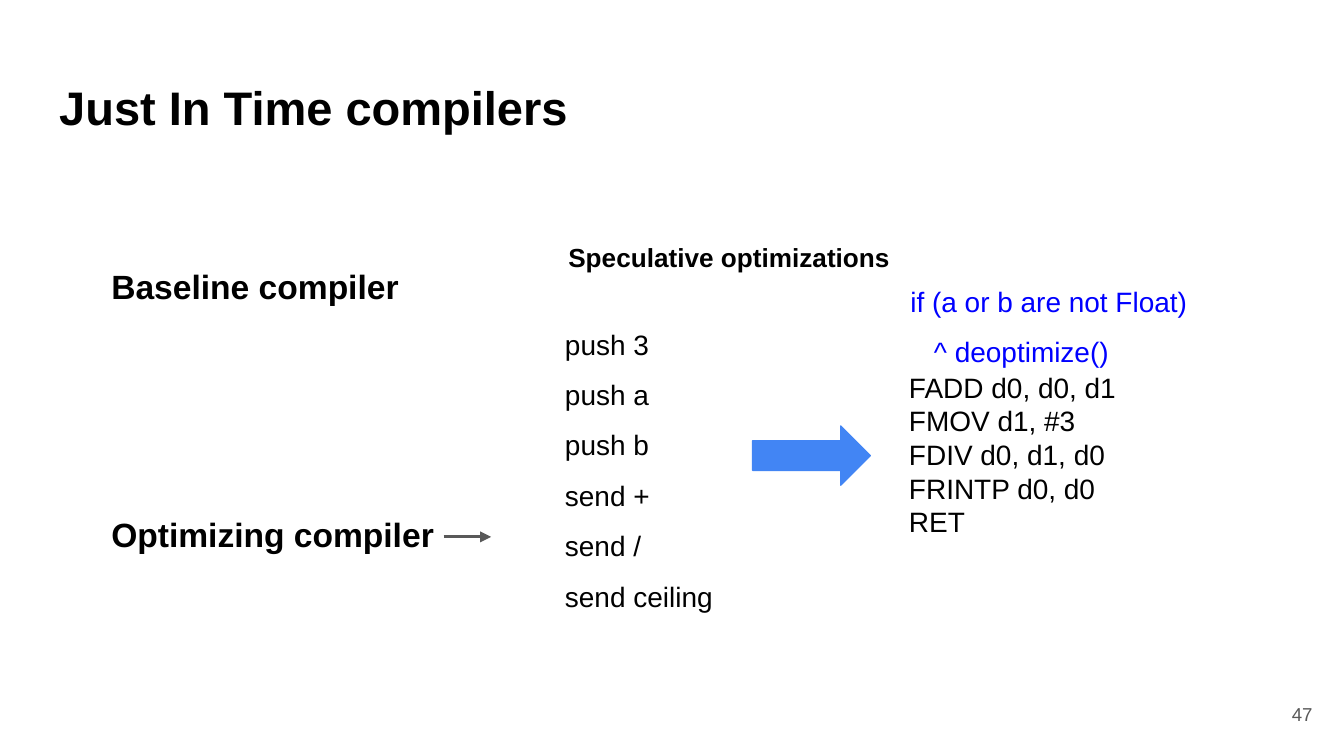
import pptx
import pptx.util
import pptx.dml.color
import pptx.enum.shapes
import pptx.enum.text
import pptx.oxml
import pptx.oxml.ns

PX = 4572  # EMU per px, 200 px to the inch
BLACK = pptx.dml.color.RGBColor(0x00, 0x00, 0x00)
GRAY = pptx.dml.color.RGBColor(0x59, 0x59, 0x59)
CODE_BLUE = pptx.dml.color.RGBColor(0x00, 0x00, 0xFF)
ARROW_BLUE = pptx.dml.color.RGBColor(0x42, 0x85, 0xF4)

ALIGN = pptx.enum.text.PP_ALIGN
ANCHOR = pptx.enum.text.MSO_ANCHOR

BYTECODES = ["push 3", "push a", "push b", "send +", "send /", "send ceiling"]
INSTRUCTIONS = ["FADD d0, d0, d1", "FMOV d1, #3", "FDIV d0, d1, d0",
                "FRINTP d0, d0", "RET"]
GUARD = ["if (a or b are not Float)", "^ deoptimize()"]


def px(*lengths):
    return [pptx.util.Emu(length * PX) for length in lengths]


def apply(target, values):
    for name, value in values.items():
        setattr(target, name, value)


def write(box, lines, size, color=BLACK, bold=False, spacing=1.0,
          align=ALIGN.LEFT, anchor=ANCHOR.TOP):
    frame = box.text_frame
    inset = px(20)[0]
    apply(frame, {"word_wrap": True, "vertical_anchor": anchor,
                  "auto_size": pptx.enum.text.MSO_AUTO_SIZE.NONE,
                  "margin_left": inset, "margin_right": inset,
                  "margin_top": inset, "margin_bottom": inset})
    for index, line in enumerate(lines):
        para = frame.add_paragraph() if index else frame.paragraphs[0]
        apply(para, {"alignment": align, "line_spacing": spacing})
        span = para.add_run()
        span.text = line
        apply(span.font, {"name": "Arial", "size": pptx.util.Pt(size), "bold": bold})
        span.font.color.rgb = color


def add_title(page, text, place):
    title = page.shapes.title
    apply(title, dict(zip(("left", "top", "width", "height"), px(*place))))
    write(title, [text], 25.2, bold=True)


def add_text(page, place, lines, size, **style):
    box = page.shapes.add_textbox(*px(*place))
    write(box, lines, size, **style)
    return box


def add_pointer(page, start_x, end_x, y):
    line = page.shapes.add_connector(pptx.enum.shapes.MSO_CONNECTOR.STRAIGHT,
                                     *px(start_x, y, end_x, y))
    line.line.color.rgb = GRAY
    line.line.width = pptx.util.Pt(1.5)
    head = pptx.oxml.ns.qn("a:tailEnd")
    outline = line.line._get_or_add_ln()
    outline.append(outline.makeelement(head, {"type": "triangle"}))
    properties = line._element.spPr
    properties.append(properties.makeelement(pptx.oxml.ns.qn("a:effectLst"), {}))


def add_block_arrow(page, place):
    arrow = page.shapes.add_shape(pptx.enum.shapes.MSO_SHAPE.RIGHT_ARROW, *px(*place))
    arrow.shadow.inherit = False
    arrow.fill.solid()
    arrow.fill.fore_color.rgb = ARROW_BLUE
    arrow.line.color.rgb = ARROW_BLUE
    arrow.line.width = pptx.util.Pt(0.75)


def main():
    deck = pptx.Presentation()
    deck.slide_width, deck.slide_height = px(2000, 1125)
    page = deck.slides.add_slide(deck.slide_layouts[5])

    # Title and page number
    add_title(page, "Just In Time compilers", (68, 97, 1864, 126))
    add_text(page, (1853, 1020, 120, 86), ["47"], 10, color=GRAY,
             align=ALIGN.RIGHT, anchor=ANCHOR.MIDDLE)

    # Compiler tiers, with a pointer from the second one
    add_text(page, (146, 376, 516, 100), ["Baseline compiler"], 18, bold=True)
    add_text(page, (146, 745, 612, 100), ["Optimizing compiler"], 18, bold=True)
    add_pointer(page, 660, 731, 799)

    # Bytecodes turned into machine instructions
    add_text(page, (821, 442, 264, 470), BYTECODES, 15, spacing=1.5)
    add_text(page, (1333, 531, 378, 292), INSTRUCTIONS, 15)
    add_block_arrow(page, (1120, 634, 175, 88))

    # Speculation heading and its guard
    add_text(page, (826, 340, 524, 88), ["Speculative optimizations"], 14, bold=True)
    guard = add_text(page, (1335, 378, 484, 166), GUARD, 15,
                     color=CODE_BLUE, spacing=1.5)
    indent = px(35)[0]
    guard.text_frame.paragraphs[1]._p.get_or_add_pPr().set("marL", str(indent))

    deck.save("out.pptx")


if __name__ == "__main__":
    main()
